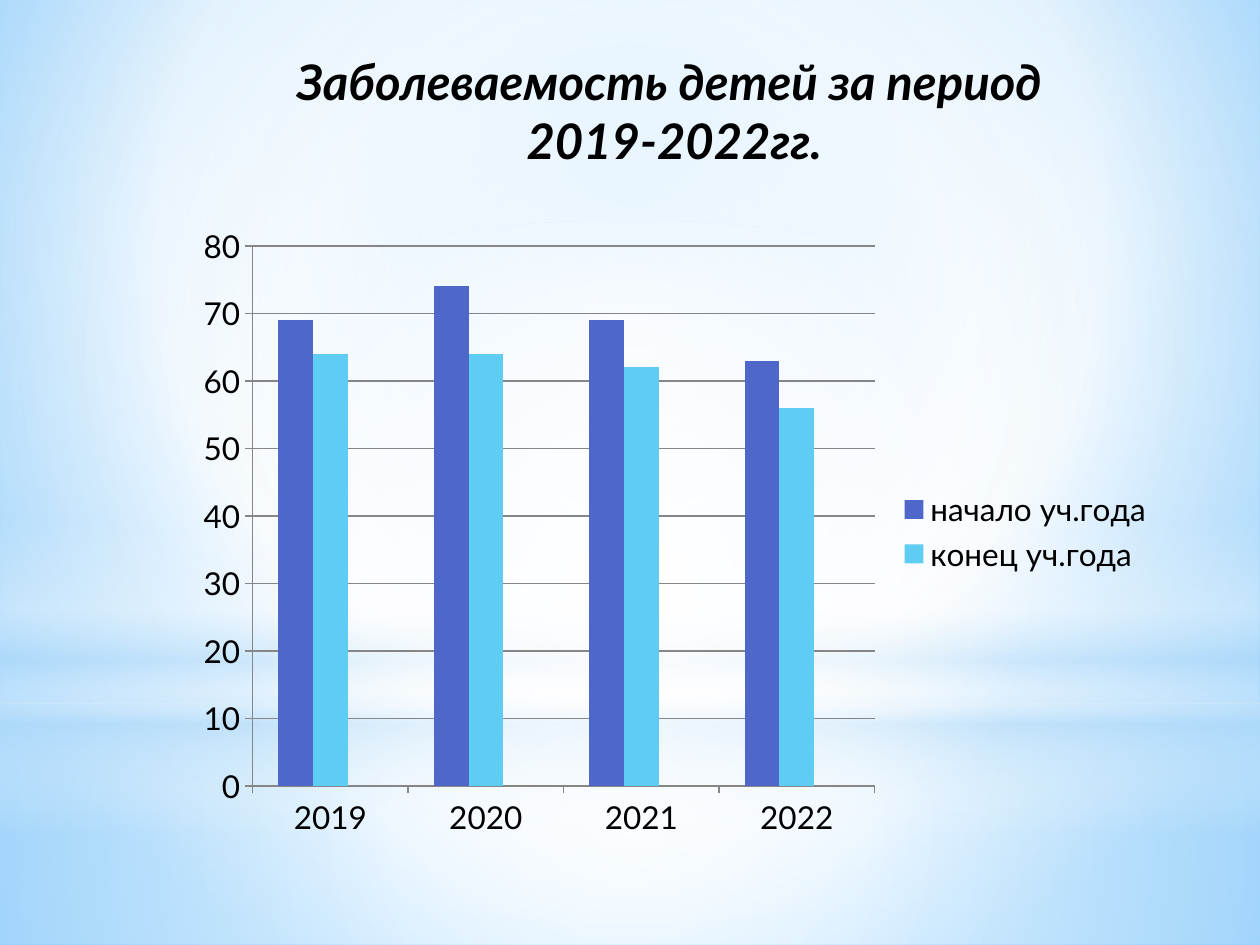
"""Build a slide with a column chart of child illness rates, 2019-2022."""
from lxml import etree
from pptx import Presentation
from pptx import util as u
from pptx.chart.data import CategoryChartData
from pptx.dml.color import RGBColor
from pptx.enum import chart as ch, shapes, text
from pptx.oxml.ns import qn

HUES = {"white": "FFFFFF", "pale": "B4DCFA", "sky": "9ED5FF", "deep": "5BB9FF",
        "ink": "000000", "grid": "868686"}
FONT = "Lato"
TITLE = ["Заболеваемость детей за период", " 2019-2022гг."]
YEARS = ["2019", "2020", "2021", "2022"]
ROWS = [
    ("начало уч.года", [69, 74, 69, 63], "4E67C8"),
    ("конец уч.года", [64, 64, 62, 56], "5ECCF3"),
    ("Series 3", [None] * 4, "A7EA52"),
]
MID = (50, 50, 50, 50)
BACK = [(0, "sky", 100), (60, "white", 100), (100, "deep", 100)]
RECT, OVAL = shapes.MSO_SHAPE.RECTANGLE, shapes.MSO_SHAPE.OVAL
GLOWS = [
    (RECT, (0, 5.58, 10, 1.92), MID,
     [(0, "white", 91), (37, "white", 76), (100, "pale", 79)]),
    (RECT, (0, 0, 10, 5.58), MID,
     [(0, "white", 89), (48, "white", 62), (100, "pale", 79)]),
    (RECT, (0, 4.12, 10, 2.5), None,
     [(0, "white", 0), (29, "white", 30), (45, "pale", 40),
      (55, "white", 26), (65, "pale", 60), (100, "white", 0)]),
    (OVAL, (0, 1.75, 10, 5.58), MID, [(0, "white", 100), (56, "white", 0)]),
]


def rgb(name):
    return RGBColor.from_string(HUES.get(name, name))


def add(node, tag, **attrs):
    return etree.SubElement(node, qn(tag), {k: str(v) for k, v in attrs.items()})


def blend(fill, root, stops, focus):
    fill.gradient()
    grad = next(root.iter(qn("a:gradFill")))
    for kid in list(grad):
        grad.remove(kid)
    stop_list = add(grad, "a:gsLst")
    for pos, hue, alpha in stops:
        stop = add(stop_list, "a:gs", pos=pos * 1000)
        color = add(stop, "a:srgbClr", val=HUES[hue])
        if alpha < 100:
            add(color, "a:alpha", val=alpha * 1000)
    if focus:
        way = add(grad, "a:path", path="circle")
        add(way, "a:fillToRect", **{k: v * 1000 for k, v in zip("ltrb", focus)})
    else:
        add(grad, "a:lin", ang=90 * 60000, scaled=0)


def style(font, size):
    font.name, font.size = FONT, u.Pt(size)
    font.color.rgb = rgb("ink")


def add_glows(slide):
    blend(slide.background.fill, slide.element, BACK, (20, 10, 20, 60))
    for kind, box, focus, stops in GLOWS:
        glow = slide.shapes.add_shape(kind, *map(u.Inches, box))
        glow.shadow.inherit = False
        glow.line.fill.background()
        blend(glow.fill, glow.element, stops, focus)


def add_title(slide):
    box = slide.shapes.add_textbox(*map(u.Inches, (1.06, 0.36, 8.5, 1.04)))
    frame = box.text_frame
    frame.word_wrap = True
    frame.auto_size = text.MSO_AUTO_SIZE.SHAPE_TO_FIT_TEXT
    frame.text = "\n".join(TITLE)
    for para in frame.paragraphs:
        para.alignment = text.PP_ALIGN.CENTER
        for run in para.runs:
            style(run.font, 28)
            run.font.bold = run.font.italic = True


def add_bars(slide):
    data = CategoryChartData()
    data.categories = YEARS
    for name, vals, _ in ROWS:
        data.add_series(name, vals)
    area = map(u.Inches, (1.46, 1.7, 7.8, 5.04))
    chart = slide.shapes.add_chart(ch.XL_CHART_TYPE.COLUMN_CLUSTERED, *area, data).chart
    style(chart.font, 18)
    chart.has_title = False
    plot = chart.plots[0]
    plot.vary_by_categories = False
    plot.gap_width, plot.overlap = 150, 0
    for bar, (_, _, hue) in zip(plot.series, ROWS):
        bar.format.fill.solid()
        bar.format.fill.fore_color.rgb = rgb(hue)

    scale = chart.value_axis
    scale.minimum_scale, scale.maximum_scale, scale.major_unit = 0, 80, 10
    scale.has_major_gridlines = True
    for axis in (scale, chart.category_axis):
        axis.major_tick_mark = ch.XL_TICK_MARK.OUTSIDE
        axis.minor_tick_mark = ch.XL_TICK_MARK.NONE
    for part in (scale, chart.category_axis, scale.major_gridlines):
        part.format.line.color.rgb = rgb("grid")
        part.format.line.width = u.Pt(0.75)

    chart.has_legend = True
    legend = chart.legend
    legend.position = ch.XL_LEGEND_POSITION.RIGHT
    legend.include_in_layout = False
    style(legend.font, 18)
    root = chart.element.find(".//" + qn("c:legend"))
    entry = add(root, "c:legendEntry")
    add(entry, "c:idx", val=2)
    add(entry, "c:delete", val=1)
    root.find(qn("c:legendPos")).addnext(entry)


def main():
    deck = Presentation()
    deck.slide_width, deck.slide_height = u.Inches(10), u.Inches(7.5)
    slide = deck.slides.add_slide(deck.slide_layouts[6])
    add_glows(slide)
    add_title(slide)
    add_bars(slide)
    deck.save("out.pptx")


if __name__ == "__main__":
    main()
